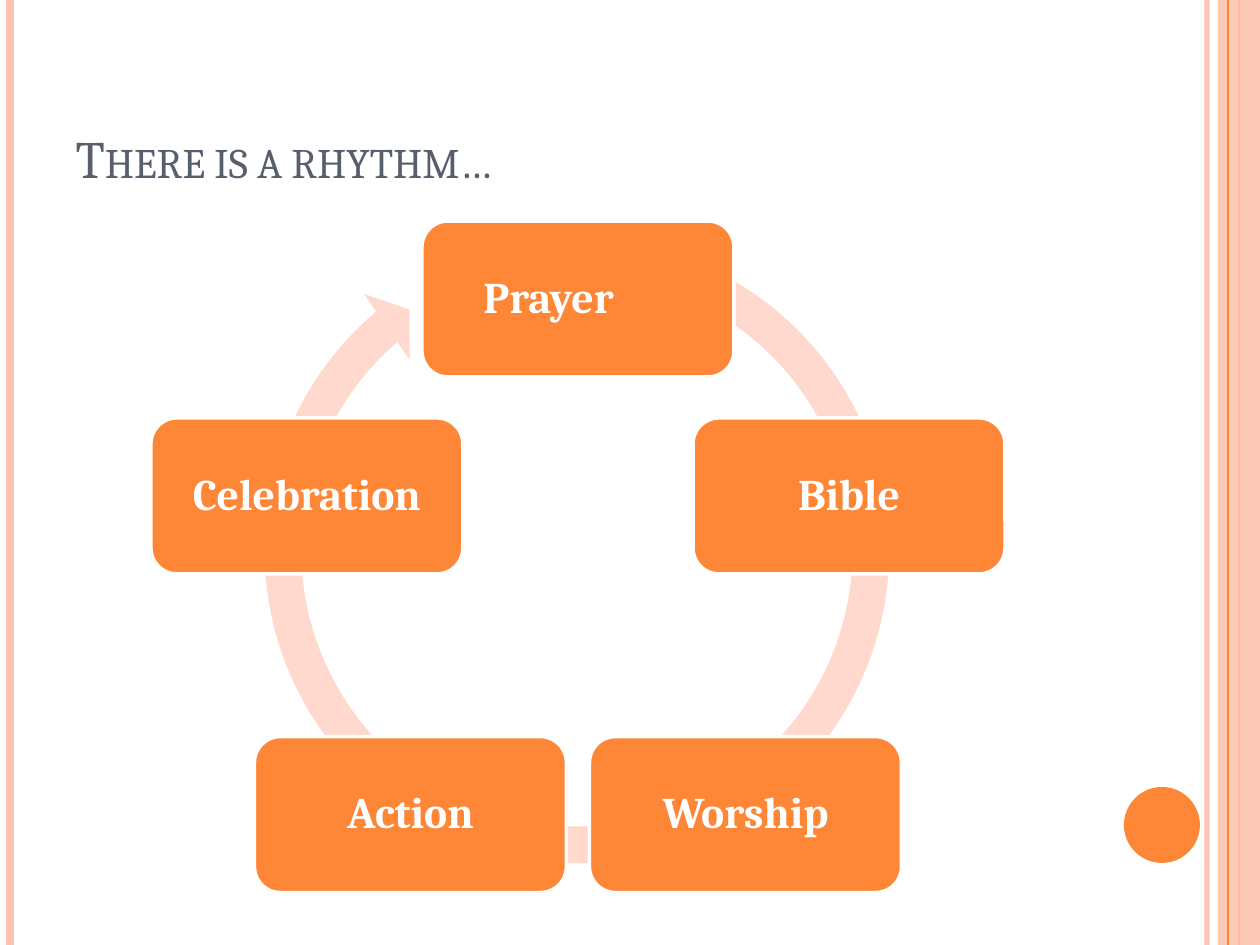
from math import cos, radians, sin

from pptx import Presentation
from pptx.dml.color import RGBColor
from pptx.enum.shapes import MSO_CONNECTOR, MSO_SHAPE
from pptx.enum.text import MSO_ANCHOR, PP_ALIGN
from pptx.oxml.ns import qn
from pptx.util import Pt
from lxml.etree import SubElement

EMU_PER_PX = 914400 / 126
WIDTH, HEIGHT = 1260, 945
FONT = "Cambria"
ORANGE, PINK, PALE = "FE8637", "FEC3AE", "FFD9CE"
WHITE, SLATE = "FFFFFF", "575F6D"


def px(n):
    return round(n * EMU_PER_PX)


def paint(fill, color, opacity=100):
    """Make a fill solid, with opacity in percent."""
    fill.solid()
    fill.fore_color.rgb = RGBColor.from_string(color)
    if opacity < 100:
        srgb = fill._xPr.find(".//" + qn("a:srgbClr"))
        SubElement(srgb, qn("a:alpha")).set("val", str(opacity * 1000))


class SlideBuilder:
    def __init__(self, slide):
        self.slide = slide

    def style_text(self, p, size, color, bold=False):
        for r in p.runs:
            r.font.name = FONT
            r.font.size = Pt(size)
            r.font.bold = bold
            r.font.color.rgb = RGBColor.from_string(color)

    def title(self, text, x, y, w, h):
        sp = self.slide.shapes.title
        sp.left, sp.top, sp.width, sp.height = map(px, (x, y, w, h))
        tf = sp.text_frame
        tf.text = text
        tf.vertical_anchor = MSO_ANCHOR.BOTTOM
        p = tf.paragraphs[0]
        p.alignment = PP_ALIGN.LEFT
        self.style_text(p, 30, SLATE)
        p.runs[0].font._element.set("cap", "small")

    def vertical_line(self, x, color, width, opacity=100):
        line = self.slide.shapes.add_connector(
            MSO_CONNECTOR.STRAIGHT, px(x), 0, px(x), px(HEIGHT))
        line.line.width = Pt(width)
        paint(line.line.fill, color, opacity)
        SubElement(line._element.spPr, qn("a:effectLst"))

    def shape(self, kind, x, y, w, h, color, opacity=100):
        sp = self.slide.shapes.add_shape(kind, *map(px, (x, y, w, h)))
        sp.shadow.inherit = False
        paint(sp.fill, color, opacity)
        sp.line.fill.background()
        return sp

    def cycle_arrow(self, x, y, size, adjustments):
        sp = self.shape(MSO_SHAPE.CIRCULAR_ARROW, x, y, size, size, PALE)
        for i, value in enumerate(adjustments):
            sp.adjustments[i] = value

    def node(self, text, cx, cy, w, h):
        """Add a labelled rounded box centred on a point."""
        sp = self.shape(MSO_SHAPE.ROUNDED_RECTANGLE, cx - w / 2, cy - h / 2, w, h, ORANGE)
        paint(sp.line.fill, WHITE)
        sp.line.width = Pt(2)
        tf = sp.text_frame
        tf.word_wrap = True
        tf.vertical_anchor = MSO_ANCHOR.MIDDLE
        tf.margin_left = tf.margin_right = tf.margin_top = tf.margin_bottom = px(20)
        p = tf.paragraphs[0]
        p.text = text
        p.alignment = PP_ALIGN.CENTER
        p.line_spacing = 0.9
        self.style_text(p, 25, WHITE, bold=True)


def main():
    prs = Presentation()
    prs.slide_width, prs.slide_height = px(WIDTH), px(HEIGHT)
    s = SlideBuilder(prs.slides.add_slide(prs.slide_layouts[5]))

    s.vertical_line(1207, PINK, 3, opacity=93)
    s.vertical_line(10, PINK, 4.5)
    s.vertical_line(1239, ORANGE, 1.5)
    s.shape(MSO_SHAPE.RECTANGLE, 1218, 0, 42, HEIGHT, PINK, opacity=87)
    s.vertical_line(1228, ORANGE, 0.75)
    s.shape(MSO_SHAPE.OVAL, 1124, 787, 76, 76, ORANGE)

    s.title("There is a rhythm…", 63, 38, 1029, 157)

    s.cycle_arrow(243, 217, 668, (0.055, 3.31, 137.81, 173.83, 0.06))
    steps = ["Prayer\t", "Bible", "Worship", "Action", "Celebration"]
    center_x, center_y, radius = 578, 584, 285
    for i, step in enumerate(steps):
        angle = radians(i * 360 / len(steps))
        s.node(step, center_x + radius * sin(angle), center_y - radius * cos(angle), 312, 156)

    prs.save("out.pptx")


if __name__ == "__main__":
    main()
